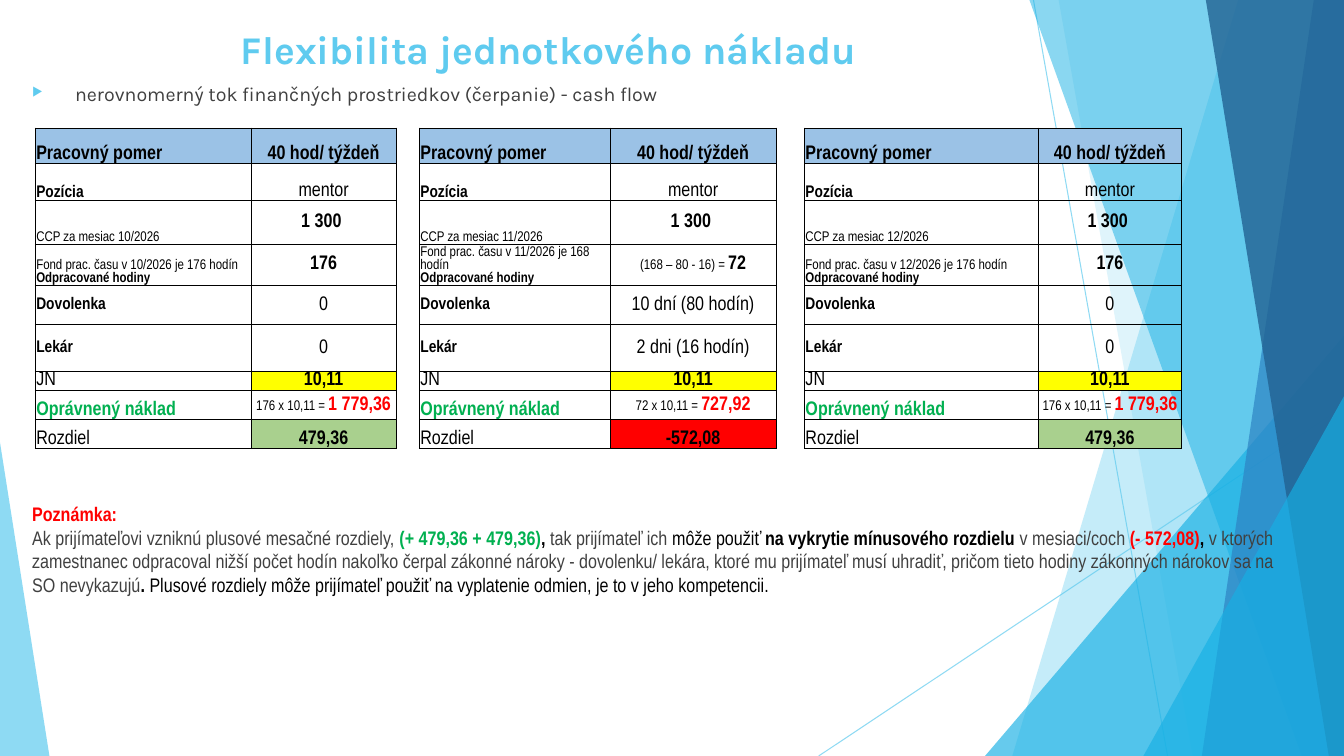
from dataclasses import dataclass
from typing import Optional, Sequence

from lxml import etree
from pptx import Presentation
from pptx import util as u
from pptx.dml.color import RGBColor
from pptx.enum import shapes, text
from pptx.oxml.ns import qn

CELL = u.Inches(0.01)  # grid step: the slide is 1333 columns by 750 rows
COLUMNS, ROWS = 1333, 750


@dataclass(frozen=True)
class Theme:
    heading_font: str = "Karla"
    text_font: str = "Arial Narrow"
    sky: str = "5FCBEF"
    azure: str = "17B0E4"
    blue: str = "2E83C3"
    navy: str = "226292"
    black: str = "000000"
    gray: str = "404040"
    red: str = "FF0000"
    green: str = "00B050"
    header_fill: str = "9BC2E6"
    rate_fill: str = "FFFF00"
    plus_fill: str = "A9D08E"
    title: int = 28
    normal: int = 14
    label: int = 12
    small: int = 10
    table_leading: float = 0.93  # line pitch as a share of the type size


THEME = Theme()


@dataclass(frozen=True)
class Span:
    text: str
    size: int = THEME.normal
    bold: bool = False
    color: str = THEME.black


@dataclass(frozen=True)
class Facet:
    points: Sequence[tuple[int, int]]
    color: str
    opacity: int


@dataclass(frozen=True)
class Wedge:
    left: int
    top: int
    width: int
    apex: float
    color: str
    opacity: int


@dataclass(frozen=True)
class Month:
    number: int
    fund: int
    worked: Sequence[Span]
    leave: str
    doctor: str
    hours: int
    cost: str
    difference: str
    difference_fill: str


@dataclass(frozen=True)
class Entry:
    label: Sequence[Span]
    value: Sequence[Span]
    label_anchor: text.MSO_ANCHOR
    value_anchor: text.MSO_ANCHOR
    label_fill: Optional[str] = None
    value_fill: Optional[str] = None


BOTTOM, MIDDLE = text.MSO_ANCHOR.BOTTOM, text.MSO_ANCHOR.MIDDLE
RAYS = [((1025, 0), (1158, ROWS)), ((COLUMNS, 403), (812, ROWS))]
BACKDROP = [
    Facet([(1228, 0), (COLUMNS, 0), (COLUMNS, ROWS), (1004, ROWS)], THEME.sky, 36),
    Facet([(1050, 0), (COLUMNS, 0), (COLUMNS, ROWS), (1183, ROWS)], THEME.sky, 20),
    Wedge(977, 333, 356, 1, THEME.azure, 66),
    Facet([(1021, 0), (COLUMNS, 0), (COLUMNS, ROWS), (1291, ROWS)], THEME.azure, 50),
    Facet([(1303, 0), (COLUMNS, 0), (COLUMNS, ROWS), (1192, ROWS)], THEME.blue, 70),
    Facet([(1196, 0), (COLUMNS, 0), (COLUMNS, ROWS), (1318, ROWS)], THEME.navy, 80),
    Wedge(1134, 393, 199, 1, THEME.azure, 66),
    Wedge(0, 439, 49, 0, THEME.sky, 70),
]
FULL_MONTH = [Span("176", bold=True)]
MONTHS = [
    Month(10, 176, FULL_MONTH, "0", "0", 176, "1 779,36", "479,36", THEME.plus_fill),
    Month(11, 168, [Span("(168 – 80 - 16) = ", THEME.small), Span("72", bold=True)],
          "10 dní (80 hodín)", "2 dni (16 hodín)", 72, "727,92", "-572,08", THEME.red),
    Month(12, 176, FULL_MONTH, "0", "0", 176, "1 779,36", "479,36", THEME.plus_fill),
]
TABLE_COLUMNS = [214, 144, 23, 189, 165, 28, 232, 142]
TABLE_ROWS = [35, 37, 43, 41, 39, 46, 19, 29, 29]
NOTE = [
    Span("Ak prijímateľovi vzniknú plusové mesačné rozdiely, ", color=THEME.gray),
    Span("(+ 479,36 + 479,36)", bold=True, color=THEME.green),
    Span(", ", bold=True),
    Span("tak prijímateľ ich ", color=THEME.gray),
    Span("môže použiť "),
    Span("na vykrytie mínusového rozdielu ", bold=True),
    Span("v mesiaci/coch ", color=THEME.gray),
    Span("(- 572,08)", bold=True, color=THEME.red),
    Span(", ", bold=True),
    Span("v ktorých zamestnanec odpracoval nižší počet hodín nakoľko čerpal zákonné nároky - "
         "dovolenku/ lekára, ktoré mu prijímateľ musí uhradiť, pričom tieto hodiny zákonných "
         "nárokov sa na SO nevykazujú", color=THEME.gray),
    Span(". ", bold=True),
    Span("Plusové rozdiely môže prijímateľ použiť na vyplatenie odmien, je to v jeho kompetencii."),
]


def entries(month: Month) -> list[Entry]:
    small = THEME.small
    return [
        Entry([Span("Pracovný pomer", bold=True)], [Span("40 hod/ týždeň", bold=True)],
              BOTTOM, BOTTOM, THEME.header_fill, THEME.header_fill),
        Entry([Span("Pozícia", THEME.label, True)], [Span("mentor")], BOTTOM, BOTTOM),
        Entry([Span(f"CCP za mesiac {month.number}/2026", small)], [Span("1 300 ", bold=True)],
              BOTTOM, MIDDLE),
        Entry([Span(f"Fond prac. času v {month.number}/2026 je {month.fund} hodín", small),
               Span("\n", small), Span("Odpracované hodiny", small, True)],
              month.worked, BOTTOM, MIDDLE),
        Entry([Span("Dovolenka", THEME.label, True)], [Span(month.leave)], MIDDLE, MIDDLE),
        Entry([Span("Lekár", THEME.label, True)], [Span(month.doctor)], MIDDLE, MIDDLE),
        Entry([Span("JN")], [Span("10,11", bold=True)], BOTTOM, MIDDLE, None, THEME.rate_fill),
        Entry([Span("Oprávnený náklad", bold=True, color=THEME.green)],
              [Span(f"{month.hours} x 10,11 = ", small),
               Span(month.cost, bold=True, color=THEME.red)], BOTTOM, MIDDLE),
        Entry([Span("Rozdiel")], [Span(month.difference, bold=True)],
              BOTTOM, BOTTOM, None, month.difference_fill),
    ]


def write(paragraph, spans: Sequence[Span], font_name: str = THEME.text_font) -> None:
    paragraph.font.name = font_name
    for span in spans:
        if span.text == "\n":
            paragraph.add_line_break()
            etree.SubElement(paragraph._p[-1], qn("a:rPr"), sz=str(span.size * 100))
            continue
        run = paragraph.add_run()
        run.text = span.text
        font = paragraph.font if len(spans) == 1 else run.font
        font.size, font.bold = u.Pt(span.size), span.bold
        font.color.rgb = RGBColor.from_string(span.color)


def paint(fill, color: str, opacity: int) -> None:
    fill.solid()
    fill.fore_color.rgb = RGBColor.from_string(color)
    tint = fill._xPr.find(qn("a:solidFill"))[0]
    etree.SubElement(tint, qn("a:alpha"), val=str(opacity * 1000))


def draw_backdrop(slide) -> None:
    for start, end in RAYS:
        ray = slide.shapes.add_connector(
            shapes.MSO_CONNECTOR.STRAIGHT, *(CELL * step for step in start + end))
        ray.line.width = u.Pt(0.75)
        paint(ray.line.fill, THEME.sky, 70)
        etree.SubElement(ray._element.spPr, qn("a:effectLst"))
    for part in BACKDROP:
        if isinstance(part, Facet):
            builder = slide.shapes.build_freeform(*part.points[0], scale=CELL)
            builder.add_line_segments(part.points[1:], close=True)
            shape = builder.convert_to_shape()
        else:
            shape = slide.shapes.add_shape(
                shapes.MSO_SHAPE.ISOSCELES_TRIANGLE, CELL * part.left, CELL * part.top,
                CELL * part.width, CELL * (ROWS - part.top))
            shape.adjustments[0] = part.apex
        shape.shadow.inherit = False
        shape.line.fill.background()
        paint(shape.fill, part.color, part.opacity)


def format_cell(cell, sides: str, fill: Optional[str] = None) -> None:
    cell.margin_left = cell.margin_right = cell.margin_top = CELL
    cell.margin_bottom = 0
    properties = cell._tc.get_or_add_tcPr()
    for side in "LRTB":
        border = etree.SubElement(properties, qn(f"a:ln{side}"), w=str(u.Pt(0.5)))
        if side in sides:
            solid = etree.SubElement(border, qn("a:solidFill"))
            etree.SubElement(solid, qn("a:srgbClr"), val=THEME.black)
        else:
            etree.SubElement(border, qn("a:noFill"))
    if fill:
        cell.fill.solid()
        cell.fill.fore_color.rgb = RGBColor.from_string(fill)
    else:
        cell.fill.background()


def fill_cell(cell, spans: Sequence[Span], anchor, fill: Optional[str], align) -> None:
    format_cell(cell, "LRTB", fill)
    cell.vertical_anchor = anchor
    paragraph = cell.text_frame.paragraphs[0]
    paragraph.alignment = align
    paragraph.line_spacing = u.Pt(max(span.size for span in spans) * THEME.table_leading)
    write(paragraph, spans)


def draw_table(slide) -> None:
    table = slide.shapes.add_table(
        len(TABLE_ROWS), len(TABLE_COLUMNS), CELL * 35, CELL * 127,
        CELL * sum(TABLE_COLUMNS), CELL * sum(TABLE_ROWS)).table
    table.first_row = table.horz_banding = False
    for column, width in zip(table.columns, TABLE_COLUMNS):
        column.width = CELL * width
    for row, height in zip(table.rows, TABLE_ROWS):
        row.height = CELL * height
    for block, month in enumerate(MONTHS):
        left = block * 3
        for row, entry in enumerate(entries(month)):
            fill_cell(table.cell(row, left), entry.label, entry.label_anchor,
                      entry.label_fill, text.PP_ALIGN.LEFT)
            fill_cell(table.cell(row, left + 1), entry.value, entry.value_anchor,
                      entry.value_fill, text.PP_ALIGN.CENTER)
            if block < len(MONTHS) - 1:
                gap = table.cell(row, left + 2)
                format_cell(gap, "LR")
                etree.SubElement(gap.text_frame.paragraphs[0]._p, qn("a:endParaRPr"), sz="800")


def add_text_frame(slide, top: int, height: int):
    frame = slide.shapes.add_textbox(CELL * 22, CELL * top, CELL * 1271, CELL * height).text_frame
    frame.word_wrap = True
    return frame


def main() -> None:
    presentation = Presentation()
    presentation.slide_width, presentation.slide_height = CELL * COLUMNS, CELL * ROWS
    slide = presentation.slides.add_slide(presentation.slide_layouts[5])
    draw_backdrop(slide)

    # Title
    title = slide.shapes.title
    title.left, title.top, title.width, title.height = (CELL * step for step in (74, 17, 940, 63))
    title.text_frame.vertical_anchor = MIDDLE
    heading = title.text_frame.paragraphs[0]
    heading.alignment = text.PP_ALIGN.CENTER
    write(heading, [Span("Flexibilita jednotkového nákladu", THEME.title, True, THEME.sky)],
          THEME.heading_font)

    # Bulleted subtitle
    bullet = add_text_frame(slide, 76, 35).paragraphs[0]
    properties = bullet._p.get_or_add_pPr()
    properties.set("marL", str(CELL * 38))
    properties.set("indent", str(CELL * -38))
    bullet_color = etree.SubElement(properties, qn("a:buClr"))
    etree.SubElement(bullet_color, qn("a:srgbClr"), val=THEME.sky)
    etree.SubElement(properties, qn("a:buSzPct"), val="62000")
    etree.SubElement(properties, qn("a:buChar"), char="▶")
    write(bullet, [Span(" nerovnomerný tok finančných prostriedkov (čerpanie) - cash flow",
                        color=THEME.gray)], THEME.heading_font)

    # Monthly comparison and note
    draw_table(slide)
    note = add_text_frame(slide, 493, 105)
    write(note.paragraphs[0], [Span("Poznámka:", bold=True, color=THEME.red)])
    write(note.add_paragraph(), NOTE)
    presentation.save("out.pptx")


if __name__ == "__main__":
    main()
